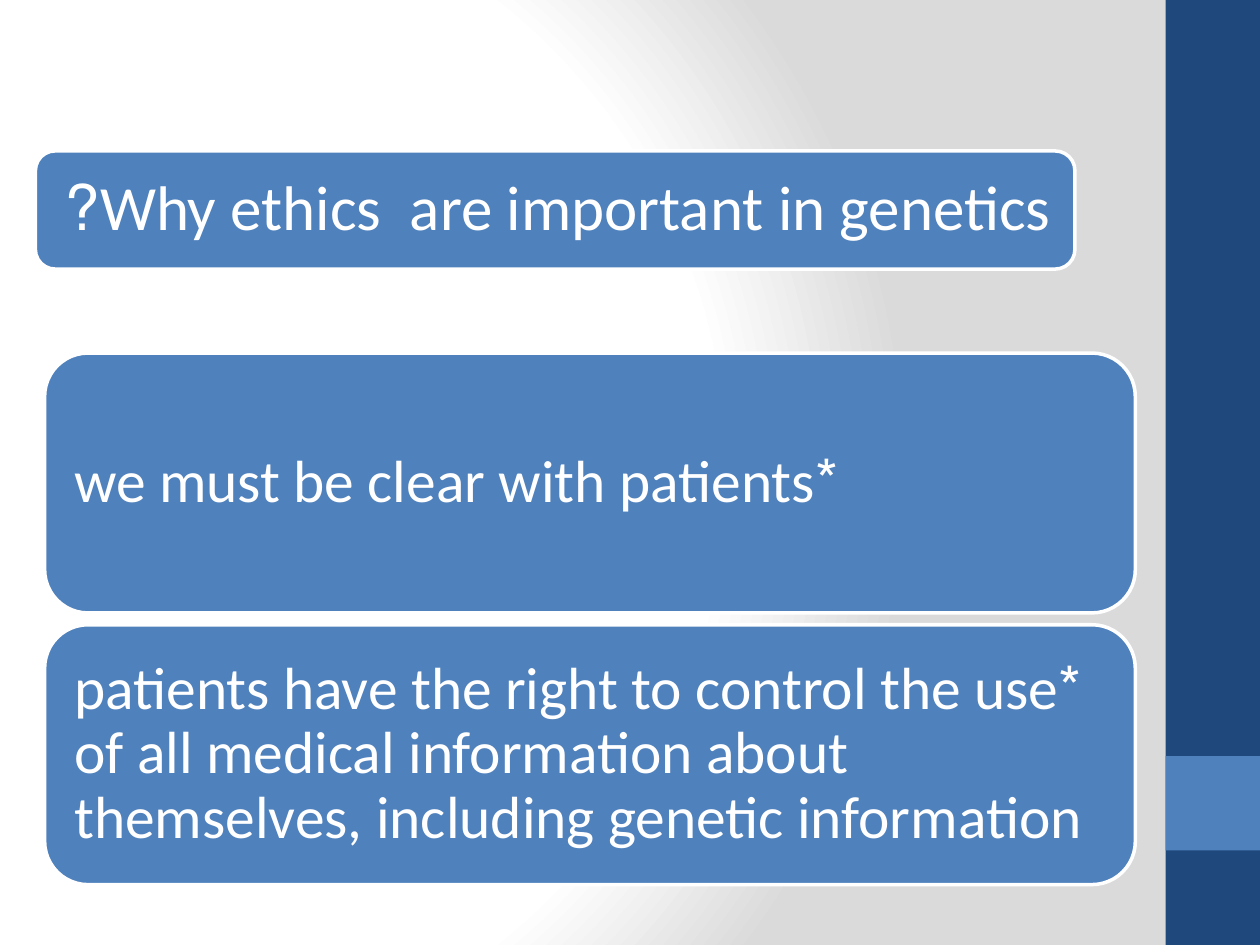
import pptx
import pptx.dml.color
import pptx.enum.shapes
import pptx.enum.text
import pptx.oxml
import pptx.oxml.ns
import pptx.util

RGBColor = pptx.dml.color.RGBColor
SHAPE = pptx.enum.shapes.MSO_SHAPE
ALIGN = pptx.enum.text.PP_ALIGN

NAVY = RGBColor(0x1F, 0x49, 0x7D)
BLUE = RGBColor(0x4F, 0x81, 0xBD)
WHITE = RGBColor(0xFF, 0xFF, 0xFF)
GREY = RGBColor(0xDA, 0xDA, 0xDA)

PX = 9525  # EMU in one px, 96 px to the inch
SLIDE_W, SLIDE_H = 960, 720
BAR_W = 72

TITLE = "Why ethics  are important in genetics?"
POINTS = [
    "*we must be clear with patients",
    "*patients have the right to control the use of all medical information "
    "about themselves, including genetic information",
]


def emu(*lengths):
    return [pptx.util.Emu(n * PX) for n in lengths]


def add_panel(slide, kind, box, fill, outlined=False):
    sp = slide.shapes.add_shape(kind, *emu(*box))
    sp.shadow.inherit = False
    sp.fill.solid()
    sp.fill.fore_color.rgb = fill
    if outlined:
        sp.line.color.rgb = WHITE
        sp.line.width = pptx.util.Pt(2)
    else:
        sp.line.fill.background()
    return sp


def write_text(sp, text, size, align, inset):
    """Set one right-to-left paragraph, centred vertically in the shape."""
    tf = sp.text_frame
    frame_format = {
        "word_wrap": True,
        "auto_size": pptx.enum.text.MSO_AUTO_SIZE.NONE,
        "vertical_anchor": pptx.enum.text.MSO_ANCHOR.MIDDLE,
    }
    for side in ("left", "top", "right", "bottom"):
        frame_format[f"margin_{side}"] = pptx.util.Emu(inset * PX)
    for name, value in frame_format.items():
        setattr(tf, name, value)
    p = tf.paragraphs[0]
    p.alignment = align
    p.line_spacing = 0.9
    p._p.get_or_add_pPr().set("rtl", "1")
    r = p.add_run()
    r.text = text
    for name, value in {"name": "Calibri", "size": pptx.util.Pt(size)}.items():
        setattr(r.font, name, value)
    r.font.color.rgb = WHITE


def set_background(slide):
    """Fill the slide with a circular gradient, white inside and grey outside."""
    stops = "".join(
        f'<a:gs pos="{percent * 1000}"><a:srgbClr val="{color}"/></a:gs>'
        for percent, color in ((0, WHITE), (75, WHITE), (100, GREY))
    )
    bg = pptx.oxml.parse_xml(
        f'<p:bg {pptx.oxml.ns.nsdecls("p", "a")}><p:bgPr>'
        f'<a:gradFill rotWithShape="1"><a:gsLst>{stops}</a:gsLst>'
        '<a:path path="circle">'
        '<a:fillToRect l="20000" t="50000" r="100000" b="50000"/></a:path>'
        "</a:gradFill><a:effectLst/></p:bgPr></p:bg>"
    )
    slide._element.cSld.insert(0, bg)


def add_side_bar(slide, x, y, w, h):
    add_panel(slide, SHAPE.RECTANGLE, (x, y, w, h), NAVY)
    add_panel(slide, SHAPE.RECTANGLE, (x, y + h - 2 * w, w, w), BLUE)


def add_title(slide, x, y, w, h):
    add_panel(slide, SHAPE.ROUNDED_RECTANGLE, (x, y, w, h), BLUE, outlined=True)
    title = slide.shapes.title
    pad = 4
    box = emu(x + pad, y + pad, w - 2 * pad, h - 2 * pad)
    for name, value in zip(("left", "top", "width", "height"), box):
        setattr(title, name, value)
    write_text(title, TITLE, 36, ALIGN.RIGHT, 14)
    slide.shapes._spTree.append(title._element)  # in front of its panel


def add_points(slide, x, y, w, h, gap=9):
    card_h = (h - gap * (len(POINTS) - 1)) // len(POINTS)
    for i, text in enumerate(POINTS):
        box = (x, y + i * (card_h + gap), w, card_h)
        sp = add_panel(slide, SHAPE.ROUNDED_RECTANGLE, box, BLUE, outlined=True)
        write_text(sp, text, 34, ALIGN.LEFT, 13)


def main():
    prs = pptx.Presentation()
    prs.slide_width, prs.slide_height = emu(SLIDE_W, SLIDE_H)
    slide = prs.slides.add_slide(prs.slide_layouts.get_by_name("Title Only"))
    set_background(slide)
    add_side_bar(slide, SLIDE_W - BAR_W, 0, BAR_W, SLIDE_H)
    add_title(slide, 27, 115, 792, 90)
    add_points(slide, 34, 269, 831, 405)
    prs.save("out.pptx")


if __name__ == "__main__":
    main()
